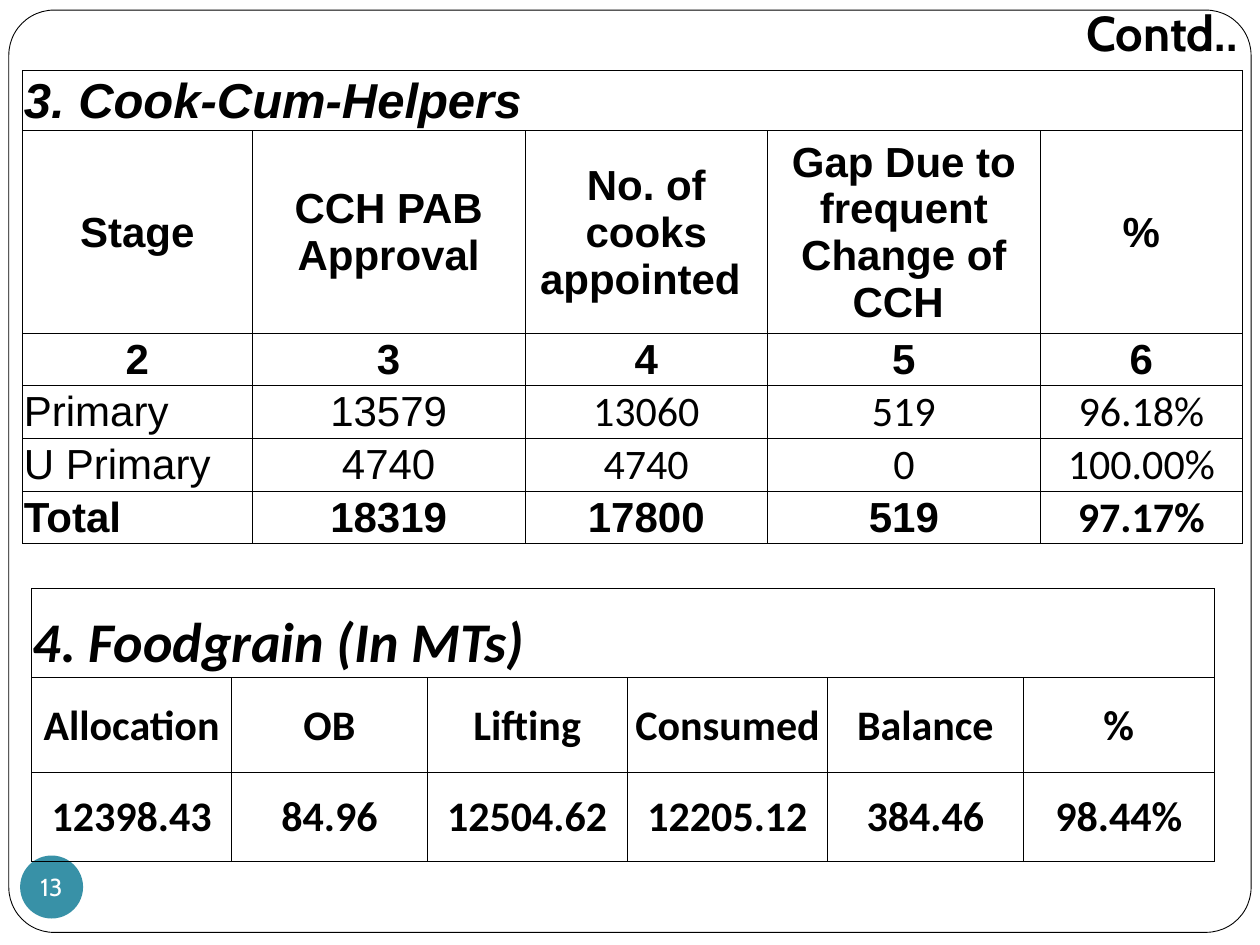
from dataclasses import dataclass

from lxml import etree
from pptx import Presentation
from pptx.dml.color import RGBColor
from pptx.enum.shapes import MSO_SHAPE
from pptx.enum.text import MSO_ANCHOR, PP_ALIGN
from pptx.oxml.ns import qn
from pptx.util import Inches, Pt

LEFT, MID, RIGHT = PP_ALIGN.LEFT, PP_ALIGN.CENTER, PP_ALIGN.RIGHT
CENTRE, BASE = MSO_ANCHOR.MIDDLE, MSO_ANCHOR.BOTTOM
ROUND, OVAL = MSO_SHAPE.ROUNDED_RECTANGLE, MSO_SHAPE.OVAL


@dataclass(frozen=True)
class Theme:
    """Colours, fonts and type sizes of the slide."""
    ink: str = "000000"
    paper: str = "FFFFFF"
    teal: str = "3891A7"
    head: str = "Cabin"
    sans: str = "Arial"
    body: str = "Calibri"
    grain: int = 32
    title: int = 28
    text: int = 24
    badge: int = 14
    line: float = 0.5


THEME = Theme()


def tint(code):
    """Return the colour for a hex code."""
    return RGBColor.from_string(code)


def write(frame, text, size, font, bold=False, italic=False,
          color=THEME.ink, align=MID):
    """Put one styled run into the first paragraph of a frame."""
    para = frame.paragraphs[0]
    para.alignment = align
    run = para.add_run()
    run.text = text
    face = run.font
    face.size, face.name = Pt(size), font
    face.bold, face.italic = bold, italic
    face.color.rgb = tint(color)


def inset(item, left, top, right, low):
    """Set the four margins of a cell or text frame in inches."""
    item.margin_left, item.margin_top = Inches(left), Inches(top)
    item.margin_right, item.margin_bottom = Inches(right), Inches(low)


def plain(slide, kind, box, fill):
    """Add a filled shape without shadow or outline."""
    shape = slide.shapes.add_shape(kind, *map(Inches, box))
    shape.shadow.inherit = False
    shape.fill.solid()
    shape.fill.fore_color.rgb = tint(fill)
    shape.line.fill.background()
    return shape


def border(slide, box):
    """Draw the rounded outline of the page."""
    shape = plain(slide, ROUND, box, THEME.paper)
    shape.adjustments[0] = 0.049
    shape.line.color.rgb = tint(THEME.ink)
    shape.line.width = Pt(THEME.line)


def title(slide, box, text):
    """Place the slide title at the right of its box."""
    frame = slide.shapes.add_textbox(*map(Inches, box)).text_frame
    frame.word_wrap = True
    frame.vertical_anchor = BASE
    inset(frame, 0.1, 0.05, 0.1, 0.1)
    write(frame, text, THEME.title, THEME.head, bold=True, align=RIGHT)


def badge(slide, box, text):
    """Place the page number in a round badge."""
    frame = plain(slide, OVAL, box, THEME.teal).text_frame
    frame.word_wrap = False
    frame.vertical_anchor = CENTRE
    inset(frame, 0, 0, 0, 0)
    write(frame, text, THEME.badge, THEME.head, color=THEME.paper)


def edge(cell):
    """Give a cell thin lines on all sides and no fill."""
    props = cell._tc.get_or_add_tcPr()
    for side in ("a:lnL", "a:lnR", "a:lnT", "a:lnB"):
        line = etree.SubElement(props, qn(side), w=str(Pt(THEME.line)))
        fill = etree.SubElement(line, qn("a:solidFill"))
        etree.SubElement(fill, qn("a:srgbClr"), val=THEME.ink)
    cell.fill.background()


def grid(slide, box, cols, rows, head):
    """Add a ruled table with a merged heading row and return it."""
    shape = slide.shapes.add_table(len(rows), len(cols), *map(Inches, box))
    table = shape.table
    table.first_row = table.horz_banding = False
    for col, width in zip(table.columns, cols):
        col.width = Inches(width)
    for row, height in zip(table.rows, rows):
        row.height = Inches(height)
    for cell in table.iter_cells():
        edge(cell)
        inset(cell, 0.01, 0.01, 0.01, 0)
        cell.vertical_anchor = CENTRE
    top = table.cell(0, 0)
    top.merge(table.cell(0, len(cols) - 1))
    text, size, font = head
    write(top.text_frame, text, size, font, True, True, align=LEFT)
    return table


def cooks(slide, box):
    """Place the table of cooks and helpers by school stage."""
    data = [
        ["Stage", "CCH PAB Approval", "No. of cooks appointed ",
         "Gap Due to frequent Change of CCH ", "%"],
        ["2", "3", "4", "5", "6"],
        ["Primary", "13579", "13060", "519", "96.18%"],
        ["U Primary", "4740", "4740", "0", "100.00%"],
        ["Total", "18319", "17800", "519", "97.17%"],
    ]
    table = grid(slide, box, [1.82, 2.17, 1.92, 2.17, 1.6],
                 [0.45, 1.49, 0.38, 0.42, 0.42, 0.42],
                 ("3. Cook-Cum-Helpers", THEME.title, THEME.sans))
    for r, row in enumerate(data, 1):
        stage = r in (3, 4)
        for c, text in enumerate(row):
            cell = table.cell(r, c)
            calc = stage and c > 1 or r == 5 and c == 4
            if calc:
                cell.vertical_anchor = BASE
            write(cell.text_frame, text, THEME.text,
                  THEME.body if calc else THEME.sans, not stage,
                  align=LEFT if r > 2 and c == 0 else MID)


def grain(slide, box):
    """Place the table of foodgrain stock and use."""
    data = [
        ["Allocation", "OB", "Lifting", "Consumed", "Balance", "%"],
        ["12398.43", "84.96", "12504.62", "12205.12", "384.46", "98.44%"],
    ]
    table = grid(slide, box, [1.59, 1.55, 1.59, 1.59, 1.55, 1.52],
                 [0.71, 0.75, 0.71],
                 ("4. Foodgrain (In MTs)", THEME.grain, THEME.body))
    table.cell(0, 0).vertical_anchor = BASE
    for r, row in enumerate(data, 1):
        for c, text in enumerate(row):
            write(table.cell(r, c).text_frame, text,
                  THEME.text, THEME.body, True)


def main():
    """Build the slide and save it."""
    deck = Presentation()
    deck.slide_width, deck.slide_height = Inches(10), Inches(7.5)
    slide = deck.slides.add_slide(deck.slide_layouts[6])
    border(slide, (0.07, 0.08, 9.86, 7.32))
    title(slide, (1.42, -0.08, 8.5, 0.67), "Contd..")
    badge(slide, (0.16, 6.79, 0.5, 0.5), "13")
    cooks(slide, (0.18, 0.56, 9.67, 3.58))
    grain(slide, (0.25, 4.67, 9.42, 2.17))
    deck.save("out.pptx")


if __name__ == "__main__":
    main()
